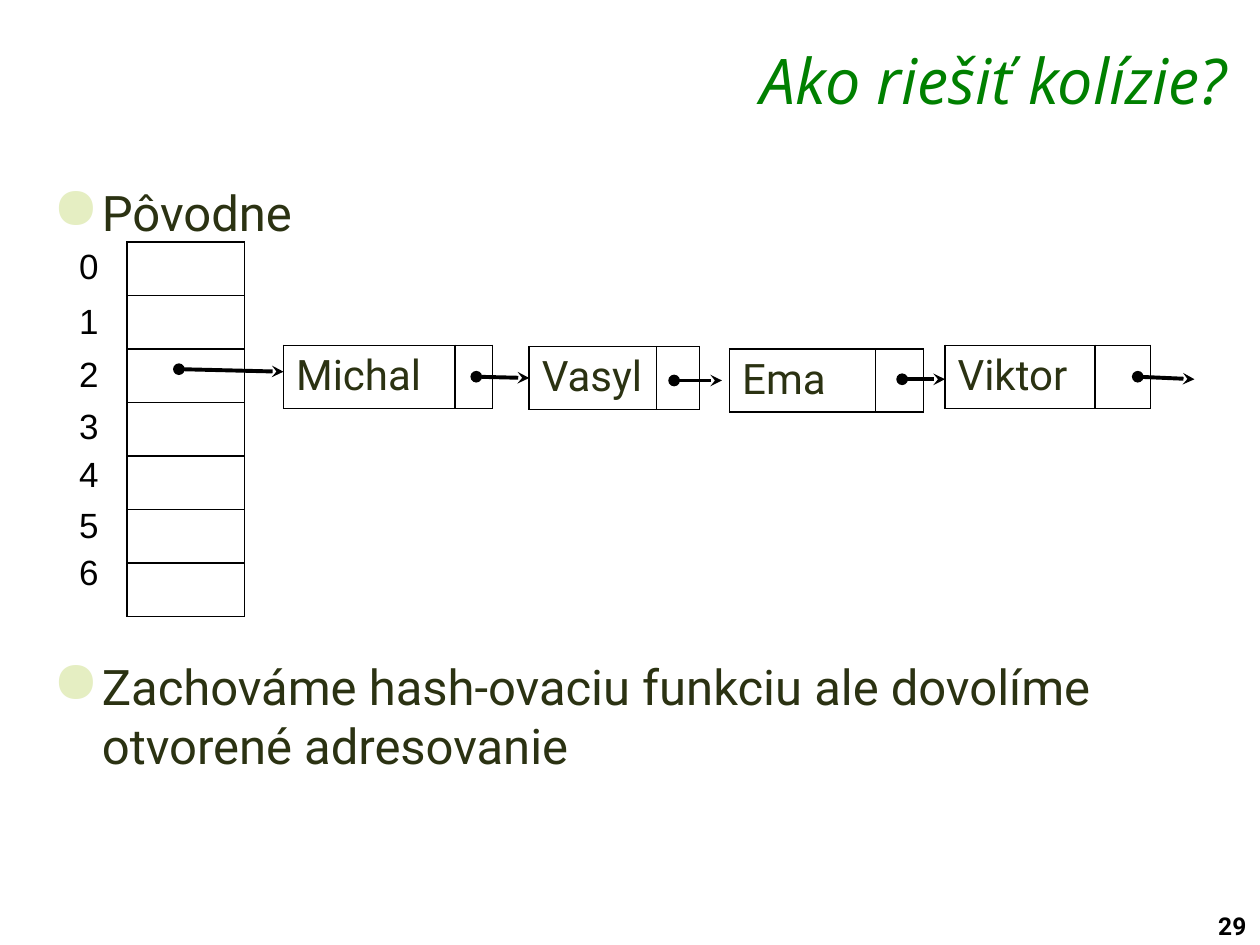
from lxml import etree
from pptx import Presentation
from pptx.dml.color import RGBColor
from pptx.enum.shapes import MSO_CONNECTOR
from pptx.enum.text import PP_ALIGN
from pptx.oxml.ns import qn
from pptx.util import Inches, Pt

STRAIGHT = MSO_CONNECTOR.STRAIGHT
RIGHT = PP_ALIGN.RIGHT

BLACK, WHITE = "000000", "FFFFFF"
GREEN, OLIVE, PALE = "008000", "2B3212", "E5EEC2"

TITLE = "Ako riešiť kolízie?"
# text, space before in points (the second leaves room for the diagram)
BULLETS = [
    ("Pôvodne", 0),
    ("Zachováme hash-ovaciu funkciu ale dovolíme otvorené adresovanie", 237),
]
PAGE_NUMBER = "29"

INDEX_TOPS = [1.89, 2.33, 2.75, 3.16, 3.54, 3.95, 4.32]
BUCKET_LEFT, BUCKET_TOP, BUCKET_WIDTH, BUCKET_HEIGHT = 1.01, 1.92, 0.93, 0.425
NODE_HEIGHT = 0.5
# name, left, top, name width, pointer width
NODES = [
    ("Michal", 2.25, 2.74, 1.36, 0.30),
    ("Vasyl", 4.20, 2.75, 1.01, 0.34),
    ("Ema", 5.79, 2.77, 1.16, 0.38),
    ("Viktor", 7.50, 2.74, 1.19, 0.44),
]
# start x, start y, end x, end y
POINTERS = [
    (1.42, 2.93, 2.25, 2.95),
    (3.78, 2.99, 4.20, 3.00),
    (5.35, 3.02, 5.73, 3.02),
    (7.16, 3.01, 7.50, 3.01),
    (9.03, 2.99, 9.48, 3.01),
]


def color(value):
    return RGBColor.from_string(value)


def add_span(para, text, size, font, ink, bold=False, italic=False):
    span = para.add_run()
    span.text = text
    span.font.size = Pt(size)
    span.font.name = font
    span.font.color.rgb = color(ink)
    span.font.bold = bold
    span.font.italic = italic


def add_box(page, left, top, width, height, wrap=True):
    box = page.shapes.add_textbox(*map(Inches, (left, top, width, height)))
    box.text_frame.word_wrap = wrap
    return box.text_frame


def add_bullet(para):
    props = para._p.get_or_add_pPr()
    props.set("marL", str(Inches(0.39)))
    props.set("indent", str(-Inches(0.39)))
    ink = etree.SubElement(props, qn("a:buClr"))
    etree.SubElement(ink, qn("a:srgbClr"), val=PALE)
    etree.SubElement(props, qn("a:buSzPct"), val="120000")
    etree.SubElement(props, qn("a:buChar"), char="●")


def style_cell(cell):
    """White fill and a thin black border on every side."""
    props = cell._tc.get_or_add_tcPr()
    for side in ("a:lnL", "a:lnR", "a:lnT", "a:lnB"):
        edge = etree.SubElement(props, qn(side), w=str(Pt(1)))
        fill = etree.SubElement(edge, qn("a:solidFill"))
        etree.SubElement(fill, qn("a:srgbClr"), val=BLACK)
    cell.fill.solid()
    cell.fill.fore_color.rgb = color(WHITE)


def add_grid(page, left, top, widths, row_height, rows=1):
    area = map(Inches, (left, top, sum(widths), row_height * rows))
    table = page.shapes.add_table(rows, len(widths), *area).table
    table.first_row = False
    table.horz_banding = False
    for column, width in zip(table.columns, widths):
        column.width = Inches(width)
    for row in table.rows:
        row.height = Inches(row_height)
    for cell in table.iter_cells():
        style_cell(cell)
    return table


def add_pointer(page, *ends):
    pointer = page.shapes.add_connector(STRAIGHT, *map(Inches, ends))
    pointer.line.color.rgb = color(BLACK)
    pointer.line.width = Pt(2.25)
    line = pointer.line._get_or_add_ln()
    etree.SubElement(line, qn("a:headEnd"), type="oval")
    etree.SubElement(line, qn("a:tailEnd"), type="stealth")
    etree.SubElement(pointer._element.spPr, qn("a:effectLst"))


def main():
    deck = Presentation()
    deck.slide_width, deck.slide_height = Inches(10), Inches(7.5)
    page = deck.slides.add_slide(deck.slide_layouts[6])

    number = add_box(page, 9.57, 7.18, 0.51, 0.33, wrap=False)
    add_span(number.paragraphs[0], PAGE_NUMBER, 14, "Roboto", BLACK, bold=True)

    title = add_box(page, 2.29, 0.31, 7.55, 0.58)
    title.margin_top = Inches(0.02)
    title.paragraphs[0].alignment = RIGHT
    add_span(title.paragraphs[0], TITLE, 36, "Open Sans", GREEN, italic=True)

    body = add_box(page, 0.32, 1.4, 9.38, 5.92)
    for i, (text, gap) in enumerate(BULLETS):
        para = body.add_paragraph() if i else body.paragraphs[0]
        add_bullet(para)
        if gap:
            para.space_before = Pt(gap)
        add_span(para, text, 28, "Roboto", OLIVE)

    add_grid(page, BUCKET_LEFT, BUCKET_TOP, [BUCKET_WIDTH], BUCKET_HEIGHT,
             rows=len(INDEX_TOPS))
    for index, top in enumerate(INDEX_TOPS):
        label = add_box(page, 0.53, top, 0.36, 0.44)
        add_span(label.paragraphs[0], str(index), 20, "Arial", BLACK)

    for name, left, top, *widths in NODES:
        node = add_grid(page, left, top, widths, NODE_HEIGHT)
        para = node.cell(0, 0).text_frame.paragraphs[0]
        add_span(para, name, 24, "Roboto", OLIVE)

    for ends in POINTERS:
        add_pointer(page, *ends)

    deck.save("out.pptx")


if __name__ == "__main__":
    main()
